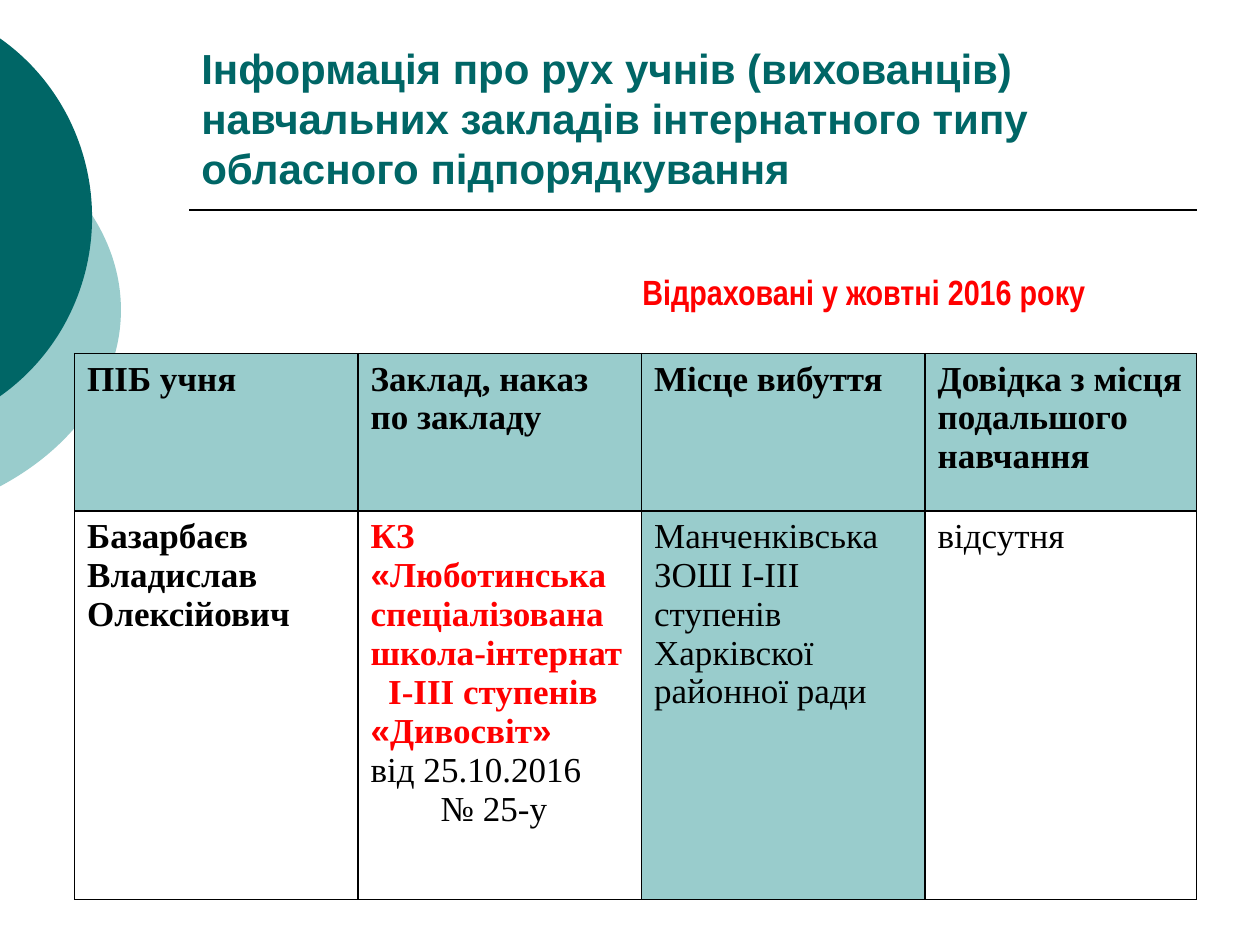
import math

from lxml import etree
from pptx import Presentation
from pptx.dml.color import RGBColor
from pptx.enum import shapes, text
from pptx.oxml import ns
from pptx.util import Pt

COLORS = {"dark": "006666", "light": "99CCCC", "red": "FF0000", "black": "000000"}
SERIF, SANS, NARROW = "Times New Roman", "Arial", "Arial Narrow"

TITLE = "Інформація про рух учнів (вихованців) навчальних закладів інтернатного типу обласного підпорядкування"
SUBTITLE = "Відраховані у жовтні 2016 року"

# A paragraph is (text, bold, color, first-line indent)
HEADERS = ["ПІБ учня", "Заклад, наказ по закладу", "Місце вибуття",
           "Довідка з місця подальшого навчання"]
PUPIL = [
    [("Базарбаєв Владислав Олексійович", True, "black", 0)],
    [("КЗ «Люботинська спеціалізована школа-інтернат", True, "red", 0),
     ("І-ІІІ ступенів «Дивосвіт»", True, "red", 10),
     ("від 25.10.2016", False, "black", 0),
     ("№ 25-у", False, "black", 40)],
    [("Манченківська ЗОШ І-ІІІ ступенів Харківскої районної ради", False, "black", 0)],
    [("відсутня", False, "black", 0)],
]
ROWS = [[[(header, True, "black", 0)] for header in HEADERS], PUPIL]
SHADED = {(0, 0), (0, 1), (0, 2), (0, 3), (1, 2)}
COLUMN_WIDTHS = [162, 162, 162, 155]
ROW_HEIGHTS = [90, 222]

# Ellipses cut by the left slide edge: left, top, width, height, color
DISCS = [(-254.9, 54, 324, 246.2, "light"), (-190.8, 0, 243.4, 248.4, "dark")]


def rgb(name):
    return RGBColor.from_string(COLORS[name])


def set_font(font, face, size, color, bold):
    font.name, font.size, font.bold = face, Pt(size), bold
    font.color.rgb = rgb(color)


def add_disc(slide, left, top, width, height, color):
    """Draw the part of an ellipse that lies right of the slide edge."""
    disc = slide.shapes.add_shape(
        shapes.MSO_SHAPE.CHORD, Pt(left), Pt(top), Pt(width), Pt(height))
    center_x = left + width / 2
    edge_y = height / 2 * math.sqrt(1 - (2 * center_x / width) ** 2)
    limit = math.degrees(math.atan2(edge_y, -center_x))
    # An adjustment of 0.6 is one degree
    disc.adjustments[0] = 0.6 * (360 - limit)
    disc.adjustments[1] = 0.6 * limit
    disc.shadow.inherit = False
    disc.fill.solid()
    disc.fill.fore_color.rgb = rgb(color)
    disc.line.fill.background()


def add_label(slide, box, words, face, size, color, anchor):
    frame = slide.shapes.add_textbox(*map(Pt, box)).text_frame
    frame.word_wrap = True
    frame.vertical_anchor = anchor
    paragraph = frame.paragraphs[0]
    paragraph.text = words
    set_font(paragraph.font, face, size, color, True)


def add_borders(cell):
    properties = cell._tc.get_or_add_tcPr()
    for index, side in enumerate(("lnL", "lnR", "lnT", "lnB")):
        border = etree.Element(ns.qn(f"a:{side}"), w=str(Pt(1)))
        fill = etree.SubElement(border, ns.qn("a:solidFill"))
        etree.SubElement(fill, ns.qn("a:srgbClr"), val=COLORS["black"])
        properties.insert(index, border)


def fill_cell(cell, paragraphs, shaded):
    if shaded:
        cell.fill.solid()
        cell.fill.fore_color.rgb = rgb("light")
    else:
        cell.fill.background()
    add_borders(cell)
    frame = cell.text_frame
    for index, (words, bold, color, indent) in enumerate(paragraphs):
        paragraph = frame.add_paragraph() if index else frame.paragraphs[0]
        set_font(paragraph.font, SERIF, 20, color, bold)
        if indent:
            paragraph._p.get_or_add_pPr().set("indent", str(Pt(indent)))
        before, quote, after = words.partition("«")
        name, closing, rest = after.partition("»")
        for part in filter(None, (before, quote, name, closing, rest)):
            run = paragraph.add_run()
            run.text = part
            set_font(run.font, SANS if part in "«»" else SERIF, 20, color, bold)


def add_pupil_table(slide):
    table = slide.shapes.add_table(
        len(ROWS), len(HEADERS), Pt(42.6), Pt(202),
        Pt(sum(COLUMN_WIDTHS)), Pt(sum(ROW_HEIGHTS))).table
    table.first_row = table.horz_banding = False
    for column, width in zip(table.columns, COLUMN_WIDTHS):
        column.width = Pt(width)
    for row, height in zip(table.rows, ROW_HEIGHTS):
        row.height = Pt(height)
    for r, row in enumerate(ROWS):
        for c, paragraphs in enumerate(row):
            fill_cell(table.cell(r, c), paragraphs, (r, c) in SHADED)


def main():
    deck = Presentation()
    deck.slide_width, deck.slide_height = Pt(720), Pt(540)
    slide = deck.slides.add_slide(deck.slide_layouts[6])

    for disc in DISCS:
        add_disc(slide, *disc)

    rule = slide.shapes.add_connector(
        shapes.MSO_CONNECTOR.STRAIGHT, Pt(108), Pt(120), Pt(684), Pt(120))
    rule.line.color.rgb = rgb("black")
    rule.line.width = Pt(1)
    etree.SubElement(rule._element.spPr, ns.qn("a:effectLst"))

    add_label(slide, (108, 24, 576, 90), TITLE, SANS, 24, "dark",
              text.MSO_ANCHOR.BOTTOM)
    add_pupil_table(slide)
    add_label(slide, (360, 151, 323, 31), SUBTITLE, NARROW, 20, "red",
              text.MSO_ANCHOR.TOP)
    deck.save("out.pptx")


if __name__ == "__main__":
    main()
